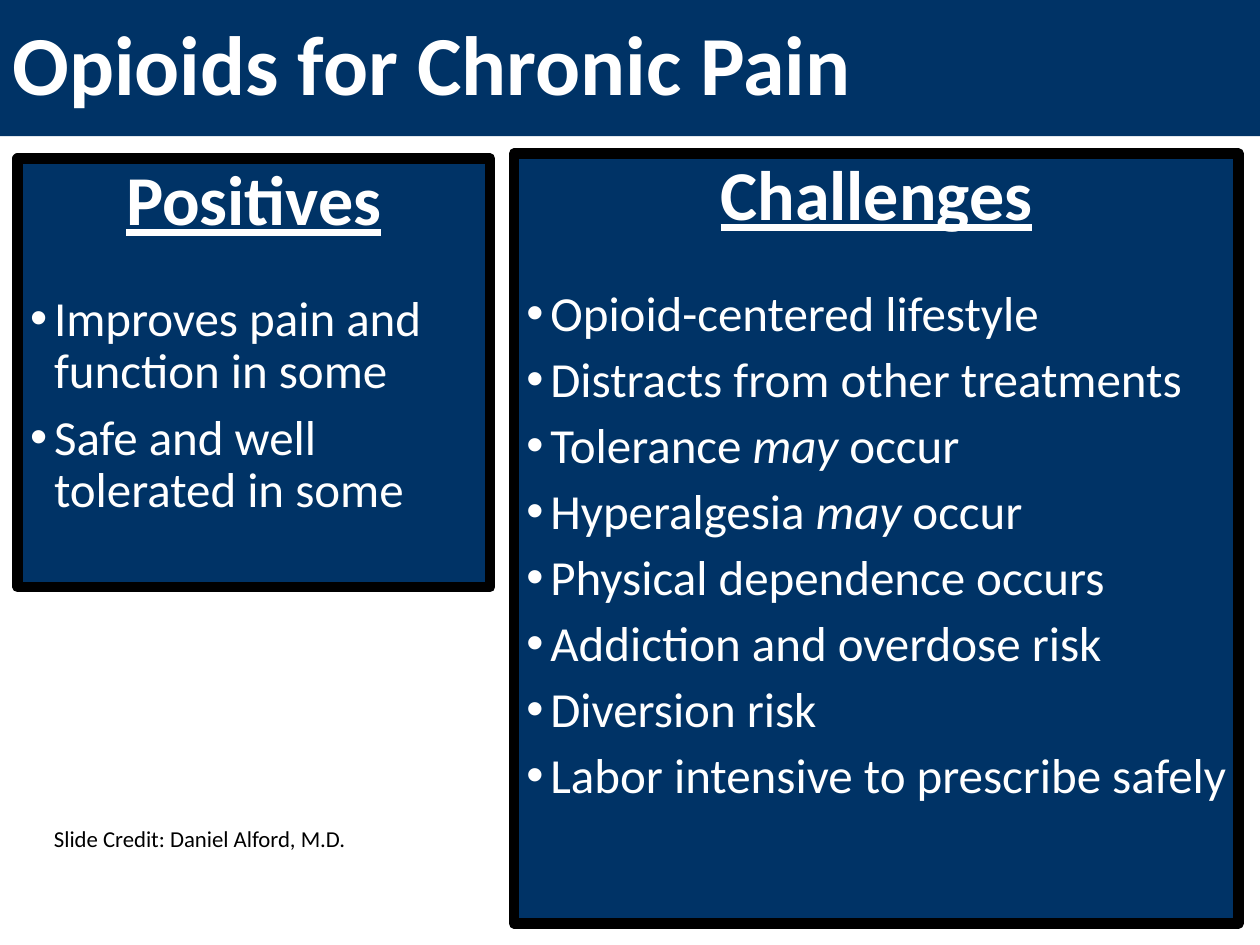
from lxml.etree import SubElement
from pptx import Presentation
from pptx.dml.color import RGBColor
from pptx.enum.shapes import MSO_SHAPE
from pptx.enum.text import MSO_ANCHOR, PP_ALIGN
from pptx.oxml.ns import qn
from pptx.util import Inches, Pt

COLORS = {"navy": "003366", "white": "FFFFFF", "black": "000000"}
FONT = "Calibri"
BULLET_INDENT = Inches(0.19)
POSITIVES = ["Improves pain and function in some", "Safe and well tolerated in some"]
CHALLENGES = [
    "Opioid-centered lifestyle",
    "Distracts from other treatments",
    "Tolerance *may* occur",
    "Hyperalgesia *may* occur",
    "Physical dependence occurs",
    "Addiction and overdose risk",
    "Diversion risk",
    "Labor intensive to prescribe safely",
]


def color(name):
    """Return the named palette colour."""
    return RGBColor.from_string(COLORS[name])


def format_runs(paragraph, size, tint, bold=False, underline=False):
    """Apply one character style to every run of a paragraph."""
    for run in paragraph.runs:
        run.font.name = FONT
        run.font.size = Pt(size)
        run.font.bold = bold
        run.font.underline = underline
        run.font.color.rgb = color(tint)


def add_block(slide, box, anchor):
    """Add a navy rectangle ready for text and return it."""
    block = slide.shapes.add_shape(MSO_SHAPE.RECTANGLE, *map(Inches, box))
    block.shadow.inherit = False
    block.fill.solid()
    block.fill.fore_color.rgb = color("navy")
    block.line.fill.background()
    block.text_frame.word_wrap = True
    block.text_frame.vertical_anchor = anchor
    return block


def space_paragraph(paragraph, alignment, before=0):
    """Set alignment, tight line spacing and the space before."""
    paragraph.alignment = alignment
    paragraph.line_spacing = 0.9
    paragraph.space_before = Pt(before)


def add_bullet(frame, wording, before):
    """Append a bulleted paragraph, with starred words in italics."""
    bullet = frame.add_paragraph()
    space_paragraph(bullet, PP_ALIGN.LEFT, before)
    for position, part in enumerate(wording.split("*")):
        run = bullet.add_run()
        run.text = part
        run.font.italic = position % 2 == 1
    format_runs(bullet, 28, "white")
    properties = bullet._p.get_or_add_pPr()
    properties.set("marL", str(BULLET_INDENT))
    properties.set("indent", str(-BULLET_INDENT))
    SubElement(properties, qn("a:buFont"), typeface="Arial")
    SubElement(properties, qn("a:buChar"), char="•")


def add_title(slide, box, wording):
    """Draw the title band."""
    band = add_block(slide, box, MSO_ANCHOR.MIDDLE)
    title = band.text_frame.paragraphs[0]
    title.text = wording
    space_paragraph(title, PP_ALIGN.LEFT)
    format_runs(title, 48, "white", bold=True)


def add_panel(slide, box, heading_text, points):
    """Draw a bordered panel with a heading and bulleted points."""
    panel = add_block(slide, box, MSO_ANCHOR.TOP)
    panel.line.color.rgb = color("black")
    panel.line.width = Pt(6)
    heading = panel.text_frame.paragraphs[0]
    heading.text = heading_text
    space_paragraph(heading, PP_ALIGN.CENTER, 7.5)
    format_runs(heading, 40, "white", bold=True, underline=True)
    for position, point in enumerate(points):
        add_bullet(panel.text_frame, point, 7.5 if position else 30.4)


def add_credit(slide, box, wording):
    """Place the credit line."""
    credit = slide.shapes.add_textbox(*map(Inches, box))
    credit.text_frame.word_wrap = True
    credit.text_frame.text = wording
    format_runs(credit.text_frame.paragraphs[0], 13, "black")


def main():
    """Build and save the slide."""
    deck = Presentation()
    deck.slide_width, deck.slide_height = Inches(10), Inches(7.5)
    slide = deck.slides.add_slide(deck.slide_layouts[6])
    add_title(slide, (0, 0, 10, 1.08), "Opioids for Chronic Pain")
    add_panel(slide, (0.14, 1.26, 3.75, 3.4), "Positives", POSITIVES)
    add_panel(slide, (4.08, 1.22, 5.75, 6.11), "Challenges", CHALLENGES)
    add_credit(slide, (0.33, 6.5, 2.67, 0.32), "Slide Credit: Daniel Alford, M.D.")
    deck.save("out.pptx")


if __name__ == "__main__":
    main()
